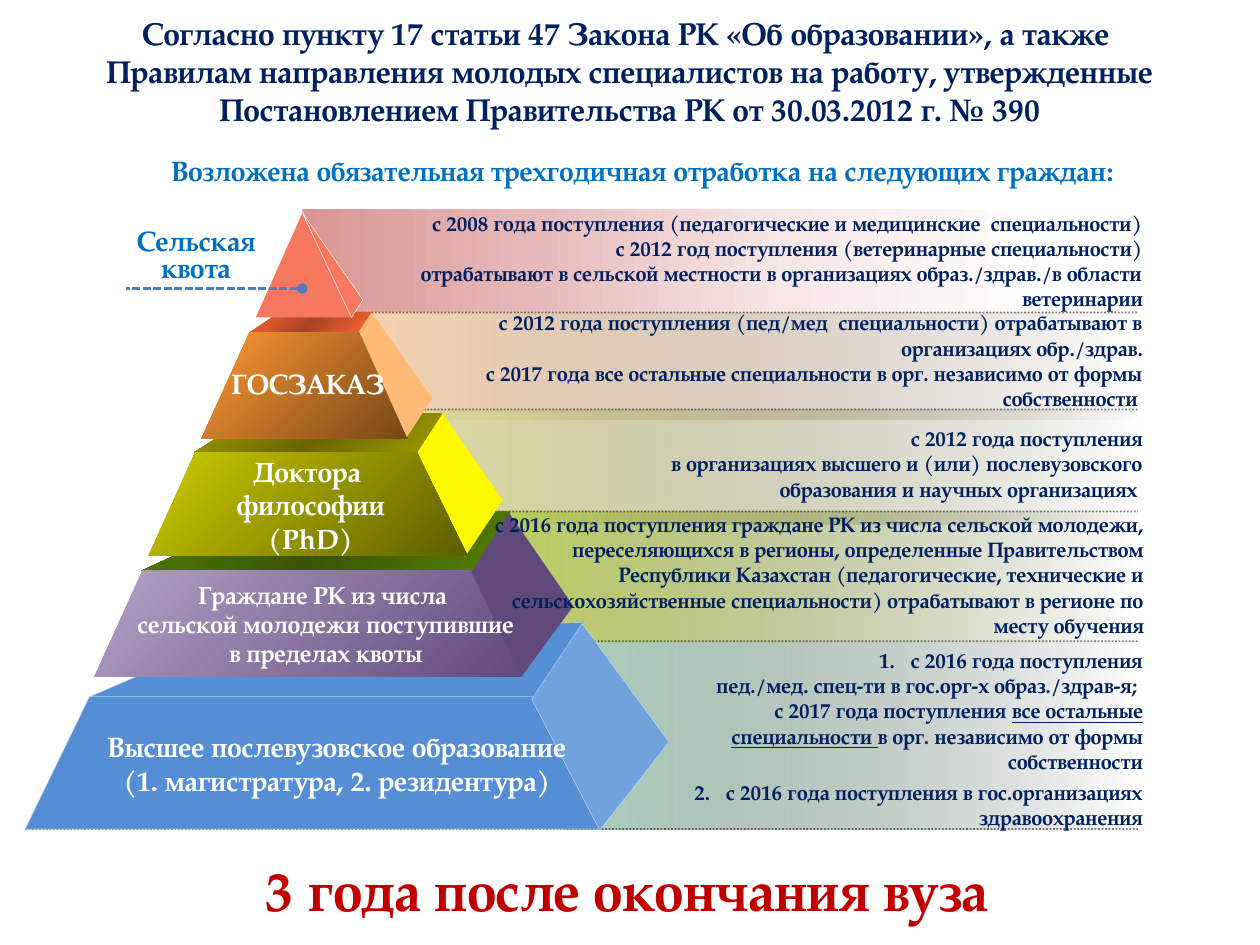
from lxml import etree
from pptx import Presentation
from pptx.dml.color import RGBColor
from pptx.enum import dml, shapes, text
from pptx.oxml import ns
from pptx.util import Inches, Pt

FONT = "TeX Gyre Pagella"
NAVY = RGBColor(0x00, 0x20, 0x60)
BLUE = RGBColor(0x00, 0x70, 0xC0)
RED = RGBColor(0xC0, 0x00, 0x00)
WHITE = RGBColor(0xFF, 0xFF, 0xFF)
BLACK = RGBColor(0x00, 0x00, 0x00)
PALE_BLUE = RGBColor(0xC6, 0xD9, 0xF1)
STEEL = RGBColor(0x4B, 0x7E, 0xBC)
LEFT, CENTER, RIGHT = (text.PP_ALIGN.LEFT, text.PP_ALIGN.CENTER, text.PP_ALIGN.RIGHT)
MIDDLE, TOP = text.MSO_ANCHOR.MIDDLE, text.MSO_ANCHOR.TOP

TITLE = ("Согласно пункту 17 статьи 47 Закона РК «Об образовании», а также \n"
         "Правилам направления молодых специалистов на работу, утвержденные\n"
         "Постановлением Правительства РК от 30.03.2012 г. № 390")

# Box, gradient stops as (position, colour, opacity) in percent
BANDS = [
    ((2.4, 1.66, 6.55, 0.82),
     [(0, "D99694", 100), (27, "E6B9B8", 100), (59, "F7E8E8", 100), (91, "FFFFFF", 100)]),
    ((2.48, 2.48, 6.55, 0.85), [(0, "FFD8B1", 100), (100, "766452", 0)]),
    ((4.49, 5.1, 4.54, 1.48), [(0, "ACCEBD", 100), (100, "505F57", 0)]),
    ((3.04, 3.25, 6.01, 0.91), [(0, "E2E0A0", 100), (100, "69684A", 0)]),
    ((3.68, 4.06, 5.35, 1.03), [(0, "BED25A", 100), (100, "58612A", 0)]),
]
DIVIDERS = [(2.81, 2.48), (2.84, 3.25), (3.68, 4.06), (4.33, 5.09), (0.2, 6.58)]  # left, y
DIVIDER_RIGHT = 9.03

# Corner points, colours (one is solid, more are an even gradient), outline
FACES = [
    # Postgraduate education
    ([(0.71, 5.53), (4.24, 5.53), (4.64, 4.94), (1.94, 5)], ["5590D7"], PALE_BLUE),
    ([(0.2, 6.58), (4.76, 6.58), (4.23, 5.53), (0.71, 5.53)], ["558ED5"], PALE_BLUE),
    ([(4.76, 6.59), (5.31, 5.89), (4.62, 4.95), (4.22, 5.55)], ["70A2DE"], PALE_BLUE),
    # Rural youth
    ([(1.12, 4.53), (3.75, 4.53), (4.05, 4.06), (2.04, 4.11)],
     ["558000", "385500", "558000"], None),
    ([(0.75, 5.37), (4.14, 5.37), (3.75, 4.53), (1.13, 4.53)], ["B3A2C7", "604A7B"], None),
    ([(4.14, 5.37), (4.55, 4.81), (4.04, 4.07), (3.74, 4.54)], ["604A7B"], None),
    # Doctors of philosophy
    ([(3.3, 3.59), (3.69, 4.42), (3.99, 3.97), (3.51, 3.28)], ["FEF800"], None),
    ([(1.54, 3.59), (3.31, 3.59), (3.51, 3.28), (2.03, 3.28)],
     ["9E9A00", "696600", "9E9A00"], None),
    ([(1.18, 4.41), (3.71, 4.41), (3.31, 3.59), (1.55, 3.59)], ["CCCC00", "5E5E00"], None),
    # State order
    ([(1.98, 2.64), (2.84, 2.64), (2.95, 2.48), (2.22, 2.48)],
     ["FF6535", "A94323", "FF6535"], None),
    ([(1.6, 3.48), (3.24, 3.48), (2.86, 2.64), (1.98, 2.64)], ["FF9933", "764718"], None),
    ([(3.23, 3.47), (3.43, 3.16), (2.95, 2.48), (2.85, 2.63)], ["FFBA75"], None),
    # Rural quota
    ([(2.03, 2.52), (2.81, 2.52), (2.4, 1.69)], ["F7785F"], None),
    ([(2.79, 2.52), (2.88, 2.38), (2.4, 1.69)], ["F7785F"], WHITE),
]

# Box, paragraphs; a paragraph is a list of (text, underlined)
DETAILS = [
    ((2.4, 1.62, 6.77, 0.91), [
        [("с 2008 года поступления (педагогические и медицинские  специальности)", False)],
        [("с 2012 год поступления (ветеринарные специальности)\n отрабатывают в сельской "
          "местности в организациях образ./здрав./в области ветеринарии", False)]]),
    ((2.95, 2.41, 6.22, 0.91), [
        [("с 2012 года поступления (пед/мед  специальности) отрабатывают в "
          "организациях обр./здрав.", False)],
        [("с 2017 года все остальные специальности в орг. независимо от формы "
          "собственности ", False)]]),
    ((4.42, 3.33, 4.75, 0.71), [
        [("с 2012 года поступления", False)],
        [("в организациях высшего и (или) послевузовского образования и научных "
          "организациях ", False)]]),
    ((3.65, 4.01, 5.53, 1.11), [
        [("с 2016 года поступления граждане РК из числа сельской молодежи, "
          "переселяющихся в регионы, определенные Правительством Республики Казахстан "
          "(педагогические, технические и сельскохозяйственные специальности) "
          "отрабатывают в регионе по месту обучения", False)]]),
]
NUMBERED = ((4.93, 5.09, 4.24, 1.57), [
    [("с 2016 года поступления\nпед./мед. спец-ти в гос.орг-х образ./здрав-я; \n"
      "с 2017 года поступления ", False),
     ("все остальные специальности ", True),
     ("в орг. независимо от формы собственности", False)],
    [("с 2016 года поступления в гос.организациях здравоохранения", False)]])

# Box, text, size, colour, anchor, wrap, line spacing
LABELS = [
    ((0.98, 1.17, 8.3, 0.37),
     "Возложена обязательная трехгодичная отработка на следующих граждан: ",
     16, BLUE, TOP, True, 1.0),
    ((0.93, 1.78, 1.25, 0.54), "Сельская квота", 16, BLUE, TOP, True, 0.8),
    ((1.71, 2.91, 1.47, 0.32), "ГОСЗАКАЗ", 16, WHITE, TOP, False, 0.8),
    ((1.23, 3.85, 2.47, 0.31), "Доктора \nфилософии\n(PhD)", 16, WHITE, MIDDLE, False, 1.0),
    ((1.06, 4.73, 3.05, 0.44),
     "Граждане РК из числа \nсельской молодежи поступившие\nв пределах квоты",
     14, WHITE, MIDDLE, False, 1.0),
    ((0.93, 5.77, 3.49, 0.58),
     "Высшее послевузовское образование\n(1. магистратура, 2. резидентура)",
     16, WHITE, MIDDLE, False, 1.0),
    ((1.48, 6.74, 7, 0.62), "3 года после окончания вуза", 32, RED, TOP, True, 1.0),
]


def set_all(target, values):
    for name, value in values.items():
        setattr(target, name, value)


def add_xml(parent, tag, **attributes):
    return etree.SubElement(parent, ns.qn(tag), {k: str(v) for k, v in attributes.items()})


def set_gradient(shape, stops, angle):
    """Fill with any number of stops; the angle runs clockwise."""
    shape.fill.gradient()
    shape.fill.gradient_angle = (360 - angle) % 360
    stop_list = shape.element.spPr.find(ns.qn("a:gradFill")).find(ns.qn("a:gsLst"))
    stop_list.clear()
    for position, color, opacity in stops:
        stop = add_xml(stop_list, "a:gs", pos=position * 1000)
        color_xml = add_xml(stop, "a:srgbClr", val=color)
        if opacity < 100:
            add_xml(color_xml, "a:alpha", val=opacity * 1000)


def add_line(slide, kind, start, end, color, width, dash):
    line = slide.shapes.add_connector(kind, *map(Inches, start + end))
    set_all(line.line, {"width": Pt(width), "dash_style": dash})
    line.line.color.rgb = color
    add_xml(line.element.spPr, "a:effectLst")
    return line.line._ln


def add_text_shadow(run):
    effects = etree.Element(ns.qn("a:effectLst"))
    shadow = add_xml(effects, "a:outerShdw", blurRad=38100, dist=38100, dir=2700000, algn="tl")
    add_xml(shadow, "a:srgbClr", val="000000")
    run.font._element.find(ns.qn("a:solidFill")).addnext(effects)


def write(shape, box, paragraphs, size, color, align, anchor=TOP, wrap=True, spacing=1.0):
    left, top, width, height = map(Inches, box)
    set_all(shape, {"left": left, "top": top, "width": width, "height": height})
    frame = shape.text_frame
    set_all(frame, {"word_wrap": wrap, "vertical_anchor": anchor,
                    "auto_size": text.MSO_AUTO_SIZE.NONE})
    for index, pieces in enumerate(paragraphs):
        paragraph = frame.add_paragraph() if index else frame.paragraphs[0]
        set_all(paragraph, {"alignment": align, "line_spacing": spacing})
        for content, underlined in pieces:
            for number, row in enumerate(content.split("\n")):
                if number:
                    paragraph.add_line_break()
                run = paragraph.add_run()
                run.text = row
                set_all(run.font, {"name": FONT, "size": Pt(size), "bold": True,
                                   "underline": underlined})
                run.font.color.rgb = color
                if color == WHITE:
                    add_text_shadow(run)
    return frame


def add_text(slide, box, *values):
    return write(slide.shapes.add_textbox(*map(Inches, box)), box, *values)


def main():
    presentation = Presentation()
    set_all(presentation, {"slide_width": Inches(10), "slide_height": Inches(7.5)})
    slide = presentation.slides.add_slide(presentation.slide_layouts[5])
    write(slide.shapes.title, (0, 0.06, 10, 1.01), [[(TITLE, False)]], 18, NAVY, CENTER, MIDDLE)

    for box, stops in BANDS:
        band = slide.shapes.add_shape(shapes.MSO_SHAPE.RECTANGLE, *map(Inches, box))
        band.shadow.inherit = False
        band.line.fill.background()
        set_gradient(band, stops, 0)
    for left, y in DIVIDERS:
        line = add_line(slide, shapes.MSO_CONNECTOR.STRAIGHT, (left, y), (DIVIDER_RIGHT, y),
                        BLACK, 1, dml.MSO_LINE.ROUND_DOT)
        add_xml(line.find(".//" + ns.qn("a:srgbClr")), "a:alpha", val=50000)

    for corners, colors, outline in FACES:
        points = [(Inches(x), Inches(y)) for x, y in corners]
        builder = slide.shapes.build_freeform(*points[0])
        builder.add_line_segments(points[1:], close=True)
        face = builder.convert_to_shape()
        face.shadow.inherit = False
        if len(colors) == 1:
            face.fill.solid()
            face.fill.fore_color.rgb = RGBColor.from_string(colors[0])
        else:
            step = 100 // (len(colors) - 1)
            set_gradient(face, [(i * step, color, 100) for i, color in enumerate(colors)], 45)
        if outline is None:
            face.line.fill.background()
        else:
            face.line.color.rgb = outline
            face.line.width = Pt(0.25)

    for box, paragraphs in DETAILS:
        add_text(slide, box, paragraphs, 12, NAVY, RIGHT)
    box, paragraphs = NUMBERED
    frame = add_text(slide, box, paragraphs, 12, NAVY, RIGHT)
    for paragraph in frame.paragraphs:
        properties = paragraph._p.get_or_add_pPr()
        set_all(paragraph, {"space_before": Pt(0 if paragraph._p is frame.paragraphs[0]._p else 3.5)})
        properties.set("marL", str(Inches(0.25)))
        properties.set("indent", str(-Inches(0.25)))
        add_xml(properties, "a:buFont", typeface="+mj-lt")
        add_xml(properties, "a:buAutoNum", type="arabicPeriod")
    for box, label, size, color, *layout in LABELS:
        add_text(slide, box, [[(label, False)]], size, color, CENTER, *layout)

    pointer = add_line(slide, shapes.MSO_CONNECTOR.ELBOW, (2.4, 2.29), (1, 2.29),
                       STEEL, 1.5, dml.MSO_LINE.SQUARE_DOT)
    pointer.find(ns.qn("a:prstDash")).set("val", "sysDash")
    add_xml(pointer, "a:headEnd", type="oval")
    presentation.save("out.pptx")


if __name__ == "__main__":
    main()
